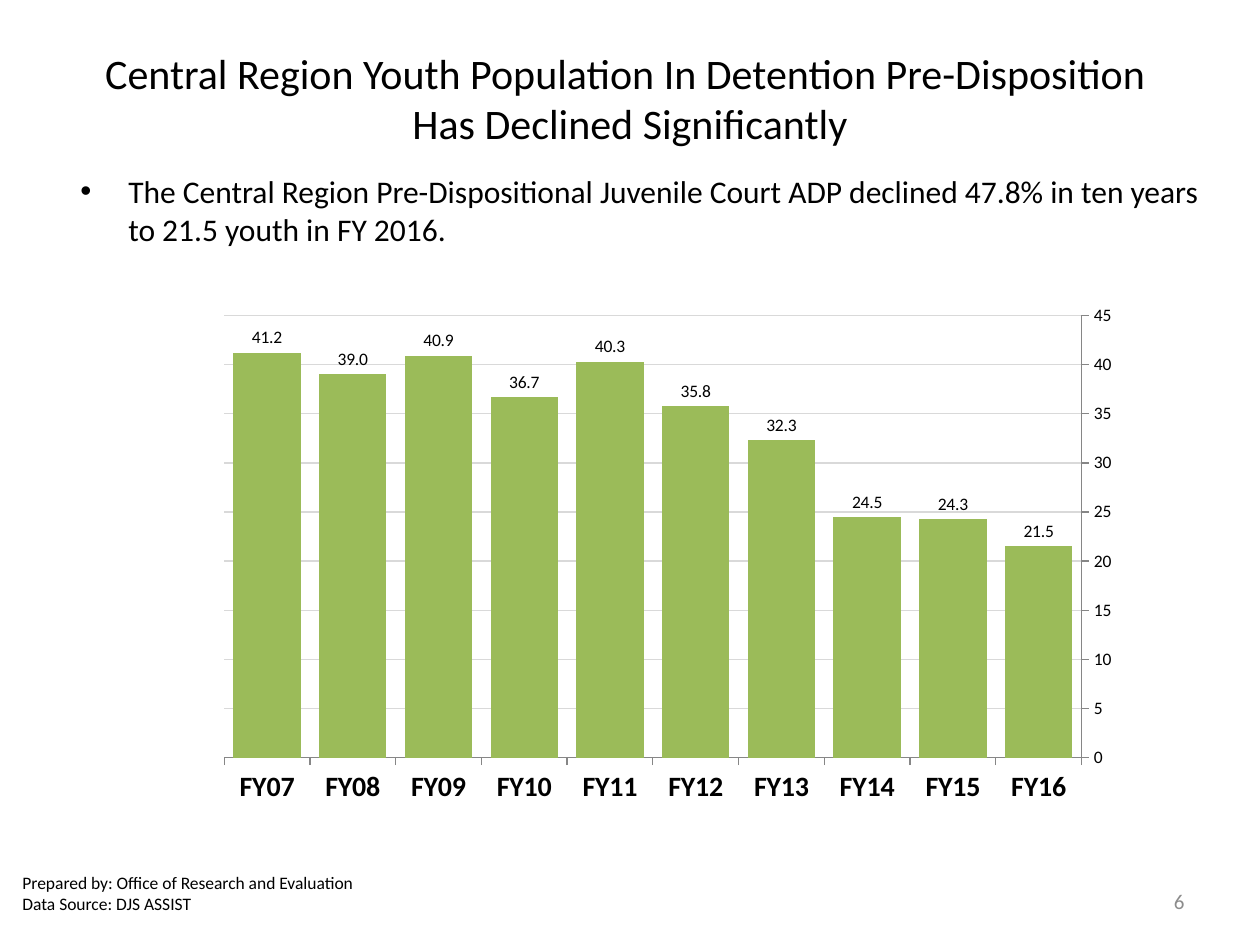
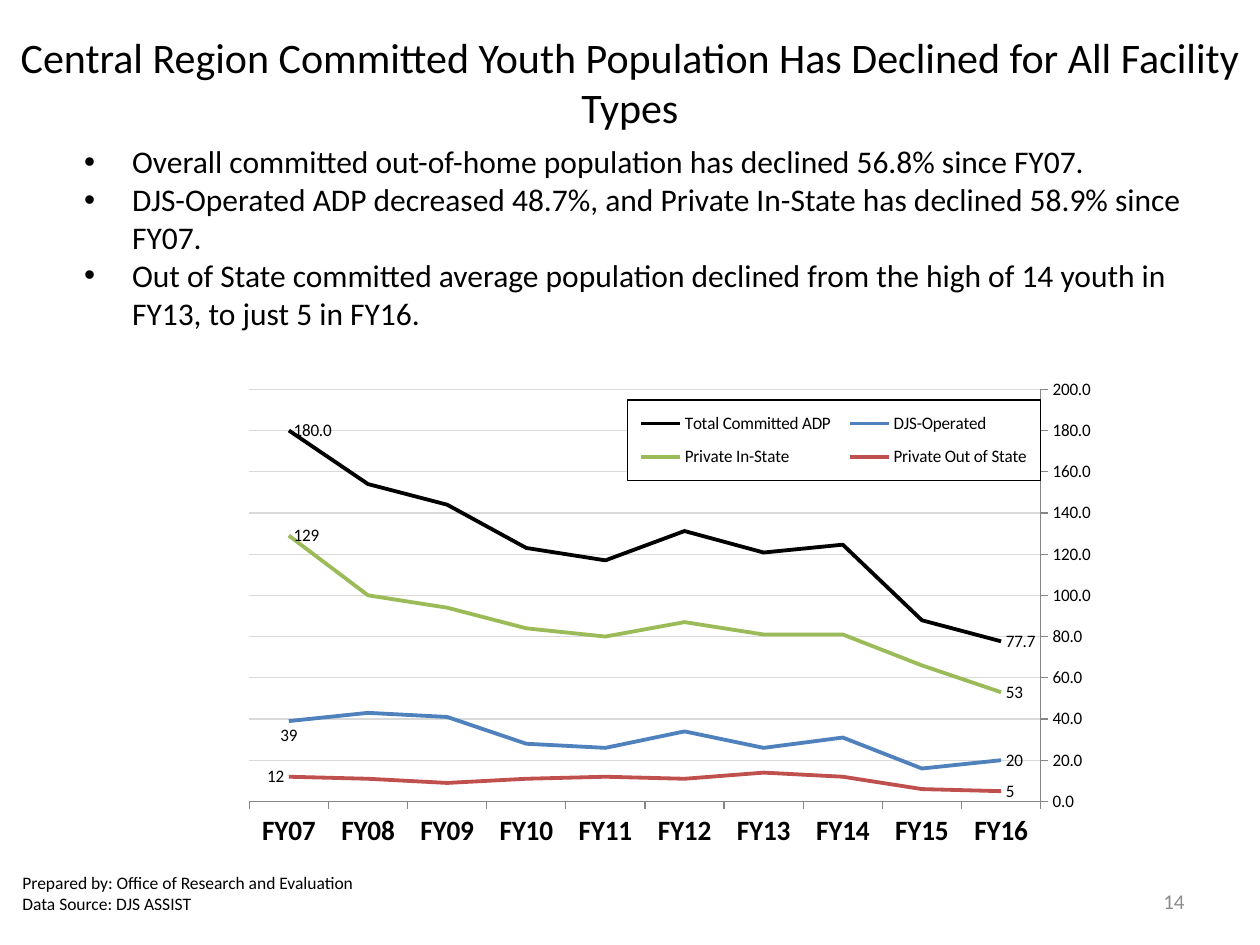
import pptx
import pptx.chart.data
import pptx.dml.color
import pptx.enum.chart
import pptx.enum.text
import pptx.oxml
import pptx.oxml.ns
import pptx.util

CELL = pptx.util.Inches(0.1)  # the grid has 100 columns and 75 rows
COLS, ROWS = 100, 75

THEME = {
    "font": "Calibri",
    "ink": "000000", "gray": "8C8C8C", "axis": "868686", "grid": "D9D9D9",
    "blue": "4F81BD", "green": "9BBB59", "red": "C0504D", "white": "FFFFFF",
    "title": 24, "body": 18, "year": 16, "page": 12, "small": 10,
    "thin": 0.75, "thick": 2.25,
}
ALIGN = pptx.enum.text.PP_ALIGN
SPOT = pptx.enum.chart.XL_LABEL_POSITION
KIND = pptx.enum.chart.XL_CHART_TYPE
NOTE = ["Prepared by: Office of Research and Evaluation",
        "Data Source: DJS ASSIST"]
YEARS = [f"FY{year:02}" for year in range(16, 6, -1)]

TITLE = {"size": "title", "align": ALIGN.CENTER}
BODY = {"size": "body", "bullet": True}
PAGE = {"size": "page", "color": "gray", "align": ALIGN.RIGHT}
SMALL = {"size": "small"}


def apply(item, form):
    for name, value in form.items():
        setattr(item, name, value)


def tint(name):
    return pptx.dml.color.RGBColor.from_string(THEME[name])


def style(font, size, color="ink", bold=False):
    apply(font, {"name": THEME["font"], "size": pptx.util.Pt(THEME[size]),
                 "bold": bold})
    font.color.rgb = tint(color)


def rule(line, color, width="thin"):
    line.color.rgb = tint(color)
    line.width = pptx.util.Pt(THEME[width])


def place(box):
    """Turn grid columns and rows into slide lengths."""
    return [round(part * CELL) for part in box]


def parse_xml(body):
    """Read one element that uses the chart and drawing prefixes."""
    tag, rest = body.split(">", 1)
    spaces = pptx.oxml.ns.nsdecls("c", "a")
    return pptx.oxml.parse_xml(f"<{tag} {spaces}>{rest}")


def add_text(slide, box, lines, size, color="ink", align=ALIGN.LEFT,
             bullet=False):
    frame = slide.shapes.add_textbox(*place(box)).text_frame
    apply(frame, {"word_wrap": True,
                  "vertical_anchor": pptx.enum.text.MSO_ANCHOR.MIDDLE})
    for index, line in enumerate(lines):
        para = frame.add_paragraph() if index else frame.paragraphs[0]
        apply(para, {"text": line, "alignment": align})
        for run in para.runs:
            style(run.font, size, color)
        if bullet:
            add_bullet(para)


def add_bullet(para):
    props = para._p.get_or_add_pPr()
    indent = pptx.util.Inches(0.38)
    props.set("marL", str(indent))
    props.set("indent", str(-indent))
    props.append(parse_xml('<a:buFont typeface="Arial"></a:buFont>'[1:]))
    props.append(parse_xml('<a:buChar char="•"></a:buChar>'[1:]))


def set_layout(node, index, box, inner=False):
    """Fix a chart part at shares of the chart's size."""
    for old in node.findall(pptx.oxml.ns.qn("c:layout")):
        node.remove(old)
    parts = '<c:layoutTarget val="inner"/>' if inner else ""
    parts += '<c:xMode val="edge"/><c:yMode val="edge"/>'
    parts += "".join(f'<c:{key} val="{value}"/>'
                     for key, value in zip("xywh", box))
    node.insert(index, parse_xml(
        f"c:layout><c:manualLayout>{parts}</c:manualLayout></c:layout>"))


def add_chart(slide, box, kind, rows, plot, top, step, form):
    data = pptx.chart.data.CategoryChartData()
    data.categories = YEARS
    for name, values, mask in rows:
        data.add_series(name, values, mask)
    chart = slide.shapes.add_chart(kind, *place(box), data).chart
    apply(chart, {"has_title": False, "has_legend": False})
    style(chart.font, "small")
    set_layout(chart._chartSpace.chart.plotArea, 0, plot, inner=True)
    set_axes(chart, top, step, form)
    return chart


def set_axes(chart, top, step, form):
    years, scale = chart.category_axis, chart.value_axis
    outside = pptx.enum.chart.XL_TICK_MARK.OUTSIDE
    apply(years, {"reverse_order": True, "major_tick_mark": outside,
                  "crosses": pptx.enum.chart.XL_AXIS_CROSSES.MAXIMUM})
    apply(scale, {"minimum_scale": 0, "maximum_scale": top,
                  "major_unit": step, "major_tick_mark": outside,
                  "has_major_gridlines": True})
    apply(scale.tick_labels, {"number_format": form,
                              "number_format_is_linked": False})
    style(years.tick_labels.font, "year", bold=True)
    style(scale.tick_labels.font, "small")
    rule(scale.major_gridlines.format.line, "grid")
    for axis in (years, scale):
        rule(axis.format.line, "axis")


def paint_bars(chart):
    plot = chart.plots[0]
    apply(plot, {"gap_width": 27, "vary_by_categories": False,
                 "has_data_labels": True})
    fill = plot.series[0].format.fill
    fill.solid()
    fill.fore_color.rgb = tint("green")
    apply(plot.data_labels, {"show_value": True, "number_format": "0.0",
                             "number_format_is_linked": False,
                             "position": SPOT.OUTSIDE_END})
    style(plot.data_labels.font, "small")


def paint_lines(chart, looks):
    """Colour each line and label its first and last year."""
    for line, (color, spot) in zip(chart.plots[0].series, looks):
        line.smooth = False
        line.marker.style = pptx.enum.chart.XL_MARKER_STYLE.NONE
        rule(line.format.line, color, "thick")
        line.data_labels.show_value = False
        for index, side in ((0, SPOT.RIGHT), (len(YEARS) - 1, spot)):
            label = line.points[index].data_label
            style(label.font, "small")
            label.position = side


def add_legend(chart, box):
    chart.has_legend = True
    legend = chart.legend
    apply(legend, {"position": pptx.enum.chart.XL_LEGEND_POSITION.RIGHT,
                   "include_in_layout": True})
    style(legend.font, "small")
    node = legend._element
    set_layout(node, 1, box)
    fill, edge = (f'<a:solidFill><a:srgbClr val="{THEME[key]}"/></a:solidFill>'
                  for key in ("white", "ink"))
    width = pptx.util.Pt(THEME["thin"])
    node.find(pptx.oxml.ns.qn("c:overlay")).addnext(parse_xml(
        f'c:spPr>{fill}<a:ln w="{width}">{edge}</a:ln></c:spPr>'))


def add_slide(deck, title, box, page):
    """Start a slide with the title, source note and page number."""
    slide = deck.slides.add_slide(deck.slide_layouts[6])
    add_text(slide, box, [title], **TITLE)
    add_text(slide, (0.8, 68.3, 29.2, 5.2), NOTE, **SMALL)
    add_text(slide, (71.7, 69.5, 23.3, 4), [page], **PAGE)
    return slide


def add_court(deck):
    slide = add_slide(
        deck, "Central Region Youth Population In Detention Pre-Disposition "
        "\nHas Declined Significantly", (5, 3, 90, 9.5), "6")
    add_text(slide, (5.4, 10.8, 92.9, 11.7), [
        "The Central Region Pre-Dispositional Juvenile Court ADP declined "
        "47.8% in ten years to 21.5 youth in FY 2016."], **BODY)
    rows = [("Series 1", [21.5, 24.3, 24.5, 32.3, 35.8,
                          40.3, 36.7, 40.9, 39, 41.2], "0.0")]
    chart = add_chart(slide, (12.5, 22.5, 75.7, 42.3), KIND.COLUMN_CLUSTERED,
                      rows, (0.07, 0.06, 0.9, 0.83), 45, 5, "0")
    paint_bars(chart)


def add_types(deck):
    slide = add_slide(
        deck, "Central Region Committed Youth Population Has Declined for "
        "All Facility Types", (0, 3, COLS, 7), "14")
    add_text(slide, (5.7, 9.2, 90.1, 19.2), [
        "Overall committed out-of-home population has declined 56.8% "
        "since FY07.",
        "DJS-Operated ADP decreased 48.7%, and Private In-State has declined "
        "58.9% since FY07.",
        "Out of State committed average population declined from the high of "
        "14 youth in FY13, to just 5 in FY16."], **BODY)
    rows = [
        ("Total Committed ADP", [77.7, 87.9, 124.6, 120.8, 131.2,
                                 117, 123, 144, 154, 180], "0.0"),
        ("DJS-Operated", [20, 16, 31, 26, 34, 26, 28, 41, 43, 39], "0"),
        ("Private In-State", [53, 66, 81, 81, 87, 80, 84, 94, 100, 129], "0"),
        ("Private Out of State", [5, 6, 12, 14, 11, 12, 11, 9, 11, 12], "0"),
    ]
    chart = add_chart(slide, (14.9, 25.8, 71.7, 42.5), KIND.LINE, rows,
                      (0.07, 0.12, 0.9, 0.77), 200, 20, "0.0")
    paint_lines(chart, [("ink", SPOT.RIGHT), ("blue", SPOT.BELOW),
                        ("green", SPOT.RIGHT), ("red", SPOT.LEFT)])
    add_legend(chart, (0.5, 0.14, 0.47, 0.15))


def main():
    deck = pptx.Presentation()
    apply(deck, {"slide_width": COLS * CELL, "slide_height": ROWS * CELL})
    add_court(deck)
    add_types(deck)
    deck.save("out.pptx")


if __name__ == "__main__":
    main()
